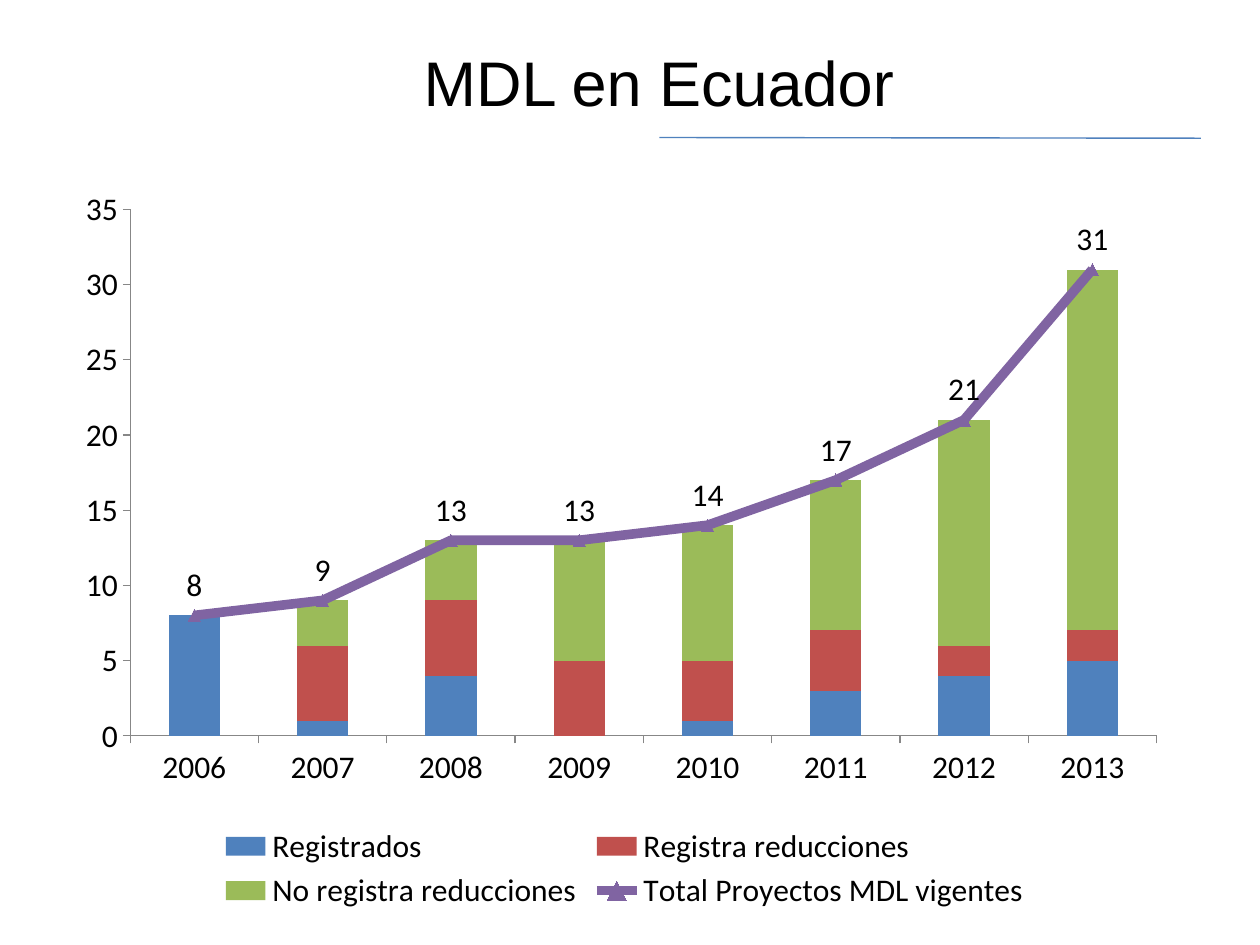
from dataclasses import dataclass
from typing import Optional

from lxml import etree
from pptx import Presentation
from pptx.chart.data import CategoryChartData
from pptx.dml.color import RGBColor
from pptx.enum.chart import (XL_CHART_TYPE, XL_LABEL_POSITION, XL_LEGEND_POSITION,
                             XL_MARKER_STYLE, XL_TICK_MARK)
from pptx.enum.shapes import MSO_CONNECTOR
from pptx.enum.text import MSO_ANCHOR, PP_ALIGN
from pptx.oxml import parse_xml
from pptx.oxml.ns import nsdecls, qn
from pptx.util import Pt

STACKED = XL_CHART_TYPE.COLUMN_STACKED
ABOVE = XL_LABEL_POSITION.ABOVE
BOTTOM = XL_LEGEND_POSITION.BOTTOM
TRIANGLE = XL_MARKER_STYLE.TRIANGLE
OUTSIDE = XL_TICK_MARK.OUTSIDE
STRAIGHT = MSO_CONNECTOR.STRAIGHT
MIDDLE = MSO_ANCHOR.MIDDLE
CENTER = PP_ALIGN.CENTER

COLORS = {
    "text": "000000",
    "background": "FFFFFF",
    "axis": "878787",
    "blue": "4F81BD",
    "red": "C0504D",
    "green": "9BBB59",
    "purple": "8064A2",
}
YEARS = [str(year) for year in range(2006, 2014)]
PLOT_AREA = {"x": 0.085, "y": 0.043, "w": 0.862, "h": 0.713}


@dataclass
class ProjectSeries:
    name: str
    counts: list[Optional[int]]
    color: str


STATUSES = [
    ProjectSeries("Registrados", [8, 1, 4, 0, 1, 3, 4, 5], "blue"),
    ProjectSeries("Registra reducciones", [None, 5, 5, 5, 4, 4, 2, 2], "red"),
    ProjectSeries("No registra reducciones", [None, 3, 4, 8, 9, 10, 15, 24], "green"),
]
TOTAL = ProjectSeries("Total Proyectos MDL vigentes",
                      [8, 9, 13, 13, 14, 17, 21, 31], "purple")


def rgb(name: str) -> RGBColor:
    return RGBColor.from_string(COLORS[name])


def paint(fill, color: str) -> None:
    fill.solid()
    fill.fore_color.rgb = rgb(color)


def write_text(frame, text: str, *, font: str, size: float, color: str, align) -> None:
    frame.text = text
    frame.word_wrap = True
    frame.vertical_anchor = MIDDLE
    paragraph = frame.paragraphs[0]
    paragraph.alignment = align
    paragraph.font.name = font
    paragraph.font.size = Pt(size)
    paragraph.font.color.rgb = rgb(color)


def add_title(slide, text: str) -> None:
    title = slide.shapes.title
    title.left, title.top, title.width, title.height = Pt(116), Pt(21), Pt(521), Pt(51)
    paint(title.fill, "background")
    write_text(title.text_frame, text, font="Arial", size=36, color="text", align=CENTER)


def add_rule(slide) -> None:
    rule = slide.shapes.add_connector(STRAIGHT, Pt(376.8), Pt(78.6), Pt(686.2), Pt(79))
    rule.line.color.rgb = rgb("blue")
    rule.line.width = Pt(0.79)
    etree.SubElement(rule._element.spPr, qn("a:effectLst"))


def move_last_series_to_line(chart) -> None:
    """Turn the last column series into a line on the same axes."""
    bar_chart = chart.plots[0]._element
    total = bar_chart.findall(qn("c:ser"))[-1]
    for bar_only in total.findall(qn("c:invertIfNegative")):
        total.remove(bar_only)
    line_chart = parse_xml(
        f'<c:lineChart {nsdecls("c")}><c:grouping val="standard"/>'
        '<c:varyColors val="0"/><c:marker val="1"/></c:lineChart>')
    line_chart.insert(2, total)
    for axis_id in bar_chart.findall(qn("c:axId")):
        etree.SubElement(line_chart, qn("c:axId")).set("val", axis_id.get("val"))
    bar_chart.addnext(line_chart)


def place_plot_area(chart) -> None:
    plot_area = chart.plots[0]._element.getparent()
    for old_layout in plot_area.findall(qn("c:layout")):
        plot_area.remove(old_layout)
    modes = "".join(f'<c:{edge}Mode val="edge"/>' for edge in "xy")
    sizes = "".join(f'<c:{key} val="{share}"/>' for key, share in PLOT_AREA.items())
    plot_area.insert(0, parse_xml(
        f'<c:layout {nsdecls("c")}><c:manualLayout><c:layoutTarget val="inner"/>'
        f'{modes}{sizes}</c:manualLayout></c:layout>'))


def format_axes(chart) -> None:
    for axis in (chart.category_axis, chart.value_axis):
        axis.has_major_gridlines = False
        axis.major_tick_mark = OUTSIDE
        axis.format.line.color.rgb = rgb("axis")
        axis.format.line.width = Pt(0.75)
    chart.value_axis.minimum_scale = 0
    chart.value_axis.maximum_scale = 35
    chart.value_axis.major_unit = 5


def format_total(line_plot) -> None:
    line = line_plot.series[0]
    line.smooth = False
    line.format.line.color.rgb = rgb(TOTAL.color)
    line.format.line.width = Pt(5.5)
    line.marker.style = TRIANGLE
    line.marker.size = 7
    paint(line.marker.format.fill, TOTAL.color)
    line.marker.format.line.color.rgb = rgb(TOTAL.color)
    line.data_labels.show_value = True
    line.data_labels.position = ABOVE


def add_project_chart(slide) -> None:
    projects = CategoryChartData()
    projects.categories = YEARS
    for entry in [*STATUSES, TOTAL]:
        projects.add_series(entry.name, entry.counts)
    chart = slide.shapes.add_chart(STACKED, Pt(16.6), Pt(101.5), Pt(680.4), Pt(422),
                                   projects).chart
    chart.has_title = False
    chart.font.name = "Calibri"
    chart.font.size = Pt(18)
    chart.font.color.rgb = rgb("text")
    chart.has_legend = True
    chart.legend.position = BOTTOM
    chart.legend.include_in_layout = False

    move_last_series_to_line(chart)
    place_plot_area(chart)
    format_axes(chart)

    columns, total_line = chart.plots
    columns.gap_width = 150
    columns.overlap = 100
    columns.vary_by_categories = False
    for column, status in zip(columns.series, STATUSES):
        paint(column.format.fill, status.color)
    format_total(total_line)


def main() -> None:
    deck = Presentation()
    deck.slide_width, deck.slide_height = Pt(720), Pt(540)
    slide = deck.slides.add_slide(deck.slide_layouts.get_by_name("Title Only"))
    paint(slide.background.fill, "background")
    add_rule(slide)
    add_project_chart(slide)
    add_title(slide, "MDL en Ecuador")
    deck.save("out.pptx")


if __name__ == "__main__":
    main()
